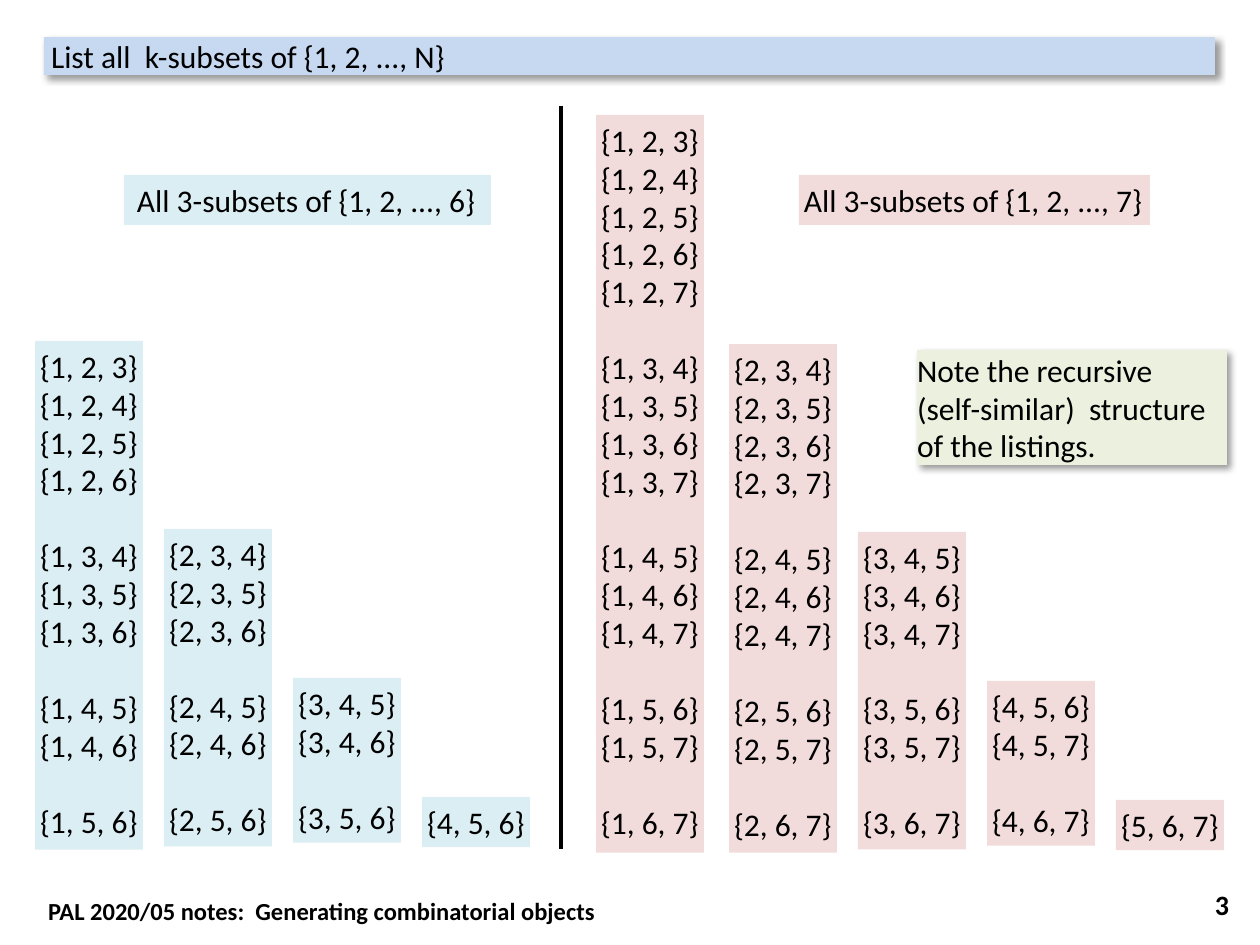
import itertools

import pptx
import pptx.dml.color
import pptx.enum.shapes
import pptx.enum.text
import pptx.oxml
import pptx.oxml.ns
import pptx.util

COLORS = {"text": "000000", "title": "C6D9F1", "six": "DBEEF4",
          "seven": "F2DCDB", "note": "EBF1DE"}
FONT = "Calibri"
K = 3

TITLE = " List all  k-subsets of {1, 2, ..., N}"
NOTE = ["Note the recursive", "(self-similar)  structure", "of the listings."]
FOOTER = "PAL 2020/05 notes:  Generating combinatorial objects"
PAGE = "3"

# One listing per N: label box, label insets, and the corner of each column
LISTINGS = [
    {"n": 6, "fill": "six", "label": (124, 175, 367, 50), "insets": (13, 6),
     "corners": [(35, 341), (164, 529), (293, 678), (422, 797)]},
    {"n": 7, "fill": "seven", "label": (799, 175, 351, 50), "insets": (5, 6),
     "corners": [(596, 115), (729, 344), (858, 532), (987, 681), (1116, 800)]},
]
COLUMN_W = 108
LINE_H = 38.2
GAP = 21.8  # points, one line of text

ANCHOR = pptx.enum.text.MSO_ANCHOR
ALIGN = pptx.enum.text.PP_ALIGN


def px(n):
    return round(n * 914400 / 126)


def rgb(name):
    return pptx.dml.color.RGBColor.from_string(COLORS[name])


def add_shadow(sp):
    ns = pptx.oxml.ns.nsdecls("a")
    effects = sp._element.spPr.find(pptx.oxml.ns.qn("a:effectLst"))
    effects.append(pptx.oxml.parse_xml(
        f'<a:outerShdw {ns} blurRad="50800" dist="38100" dir="2700000" '
        'algn="tl" rotWithShape="0"><a:srgbClr val="000000">'
        '<a:alpha val="40000"/></a:srgbClr></a:outerShdw>'))


def add_text(box, groups, fill=None, insets=(13, 6), wrap=True, size=18,
             bold=False, anchor=ANCHOR.TOP, align=ALIGN.LEFT, shadow=False):
    """Write groups of lines into a box, one line's gap between groups."""
    place = [px(v) for v in box]
    if fill:
        sp = slide.shapes.add_shape(
            pptx.enum.shapes.MSO_SHAPE.RECTANGLE, *place)
        sp.shadow.inherit = False
        sp.fill.solid()
        sp.fill.fore_color.rgb = rgb(fill)
        sp.line.fill.background()
    else:
        sp = slide.shapes.add_textbox(*place)
    if shadow:
        add_shadow(sp)
    tf = sp.text_frame
    tf.word_wrap = wrap
    tf.vertical_anchor = anchor
    if fill:
        tf.auto_size = pptx.enum.text.MSO_AUTO_SIZE.SHAPE_TO_FIT_TEXT
    tf.margin_left = tf.margin_right = px(insets[0])
    tf.margin_top = tf.margin_bottom = px(insets[1])
    p = tf.paragraphs[0]
    for g, lines in enumerate(groups):
        for i, line in enumerate(lines):
            if g or i:
                p = tf.add_paragraph()
            p.text = line
            p.alignment = align
            p.font.name = FONT
            p.font.size = pptx.util.Pt(size)
            p.font.bold = bold
            p.font.color.rgb = rgb("text")
            if g and i == 0:
                p.space_before = pptx.util.Pt(GAP)


def subsets_from(first, n):
    """The K-subsets with the given least element, grouped by the second."""
    rest = itertools.combinations(range(first + 1, n + 1), K - 1)
    return [["{" + ", ".join(map(str, (first, *s))) + "}" for s in group]
            for _, group in itertools.groupby(rest, key=lambda s: s[0])]


prs = pptx.Presentation()
prs.slide_width, prs.slide_height = px(1260), px(945)
slide = prs.slides.add_slide(prs.slide_layouts[6])

# Footer and page number
add_text((948, 879, 294, 50), [[PAGE]], size=16, bold=True,
         anchor=ANCHOR.MIDDLE, align=ALIGN.RIGHT)
add_text((35, 890, 764, 43), [[FOOTER]], size=14, bold=True)

# Title bar
add_text((44, 37, 1171, 38), [[TITLE]], "title", (0, 0),
         anchor=ANCHOR.MIDDLE, shadow=True)

# Listings, one column for each least element
for item in LISTINGS:
    n, fill = item["n"], item["fill"]
    for first, (x, y) in enumerate(item["corners"], start=1):
        groups = subsets_from(first, n)
        rows = sum(map(len, groups)) + len(groups) - 1
        add_text((x, y, COLUMN_W, 12 + LINE_H * rows), groups, fill, (5, 6),
                 wrap=False)
    add_text(item["label"], [[f"All {K}-subsets of {{1, 2, ..., {n}}}"]],
             fill, item["insets"], wrap=False)

# Divider
line = slide.shapes.add_connector(pptx.enum.shapes.MSO_CONNECTOR.STRAIGHT,
                                  px(561), px(106), px(561), px(849))
line.line.color.rgb = rgb("text")
line.line.width = pptx.util.Pt(2.25)
line._element.spPr.append(pptx.oxml.parse_xml(
    f'<a:effectLst {pptx.oxml.ns.nsdecls("a")}/>'))

# Note
add_text((917, 350, 310, 115), [NOTE], "note", (0, 0),
         anchor=ANCHOR.MIDDLE, shadow=True)

prs.save("out.pptx")
